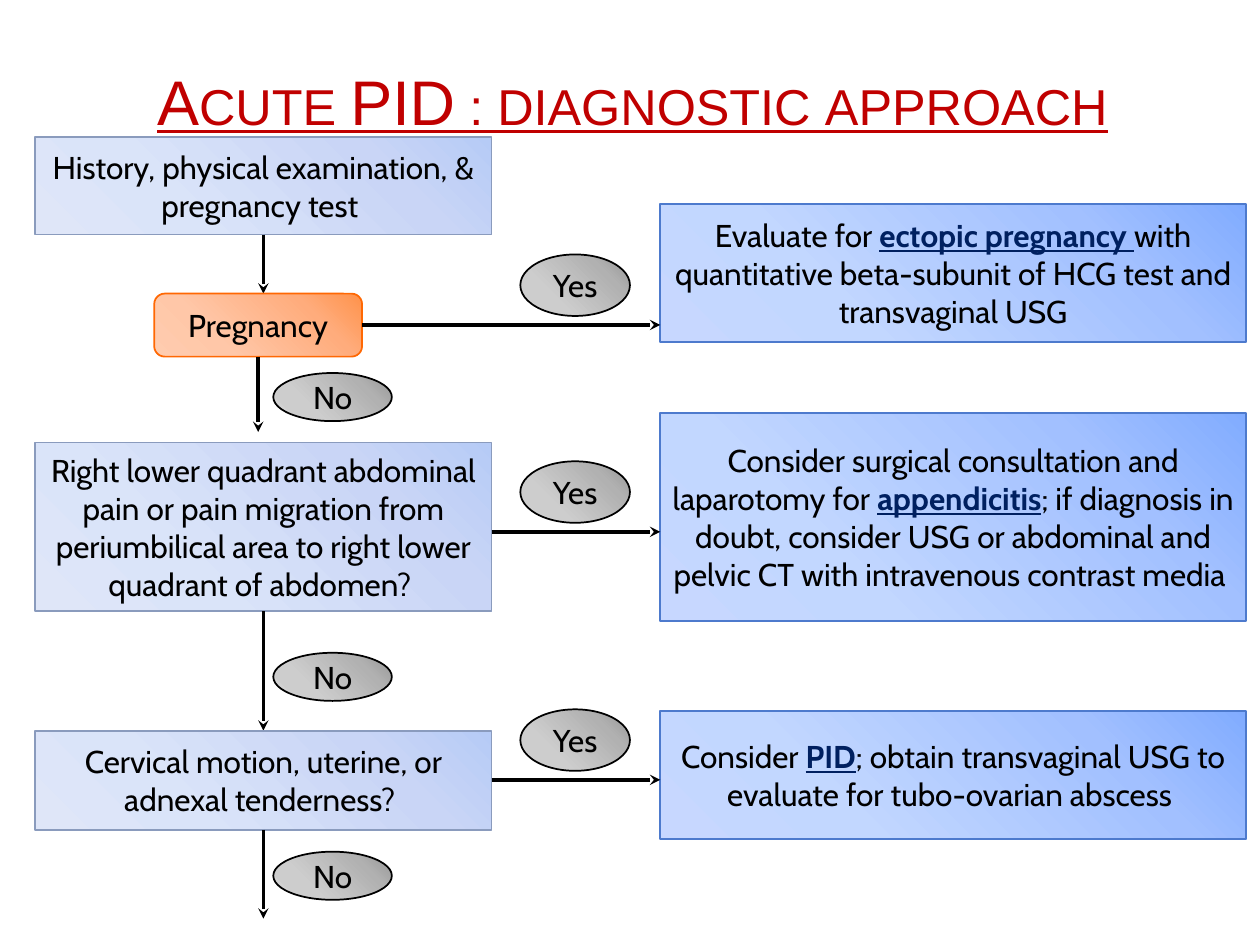
"""Build the diagnostic flowchart slide for acute PID."""
import lxml.etree
import pptx
import pptx.dml.color
import pptx.enum.shapes
import pptx.enum.text
import pptx.oxml
import pptx.oxml.ns
import pptx.util

Cm = pptx.util.Cm
SHAPES = pptx.enum.shapes.MSO_SHAPE
COLOURS = {"title": "C00000", "text": "000000", "key": "002060", "arrow": "000000"}
STYLES = {
    "step": {"stops": ["DFE6F8", "DAE4F9", "C9D5F6", "B6CBF6"], "line": "8A9BBD"},
    "outcome": {"stops": ["C7D7FF", "C2D7FF", "A2C0FF", "81ACFF"], "line": "4D7ACD"},
    "decision": {"stops": ["FFCCAF", "FFC7A8", "FFAC7C", "FF924A"], "line": "FF6803"},
    "answer": {"stops": ["D2D2D2", "CDCDCD", "B1B1B1", "949494"], "line": "000000"},
}
STOP_POSITIONS = [0, 30, 75, 100]
BODY_FONT = {"name": "Cabin", "size": pptx.util.Pt(18)}
KEY_FONT = {"bold": True, "underline": True}
TITLE_FONT = {"name": "Arial", "size": pptx.util.Pt(36), "underline": True}
STEP_LEFT, STEP_WIDTH = 0.71, 9.2
OUTCOME_LEFT, OUTCOME_WIDTH = 13.31, 11.81


def set_attributes(target, values):
    """Set every named value on the target."""
    for name, value in values.items():
        setattr(target, name, value)


def rgb(name):
    """Return the colour for a key of COLOURS or a hex string."""
    return pptx.dml.color.RGBColor.from_string(COLOURS.get(name, name))


def write_text(shape, parts, anchor=pptx.enum.text.MSO_ANCHOR.MIDDLE):
    """Write one centred paragraph from (text, colour, font values) parts."""
    frame = shape.text_frame
    set_attributes(frame, {"word_wrap": True, "vertical_anchor": anchor})
    paragraph = frame.paragraphs[0]
    paragraph.alignment = pptx.enum.text.PP_ALIGN.CENTER
    for text, colour, values in parts:
        run = paragraph.add_run()
        run.text = text
        set_attributes(run.font, values)
        run.font.color.rgb = rgb(colour)
    return paragraph


def fill_radial(shape, colours):
    """Fill the shape with a gradient spreading from its lower left corner."""
    stops = "".join(
        f'<a:gs pos="{position * 1000}"><a:srgbClr val="{colour}"/></a:gs>'
        for position, colour in zip(STOP_POSITIONS, colours))
    gradient = pptx.oxml.parse_xml(
        f'<a:gradFill {pptx.oxml.ns.nsdecls("a")} rotWithShape="1">'
        f'<a:gsLst>{stops}</a:gsLst><a:path path="circle">'
        '<a:fillToRect t="100000" r="100000"/></a:path></a:gradFill>')
    shape.fill.background()
    blank = shape.element.spPr.find(pptx.oxml.ns.qn("a:noFill"))
    shape.element.spPr.replace(blank, gradient)


def add_node(slide, box, parts, style, outline=SHAPES.RECTANGLE):
    """Add a gradient node with centred text."""
    node = slide.shapes.add_shape(outline, *map(Cm, box))
    node.shadow.inherit = False
    fill_radial(node, STYLES[style]["stops"])
    node.line.color.rgb = rgb(STYLES[style]["line"])
    node.line.width = pptx.util.Pt(1)
    write_text(node, [(text, colour, {**BODY_FONT, **values})
                      for text, colour, values in parts])


def add_arrow(slide, start, end):
    """Add a straight arrow between two points."""
    arrow = slide.shapes.add_connector(
        pptx.enum.shapes.MSO_CONNECTOR.STRAIGHT, *map(Cm, (*start, *end)))
    arrow.line.color.rgb = rgb("arrow")
    arrow.line.width = pptx.util.Pt(2)
    qn = pptx.oxml.ns.qn
    lxml.etree.SubElement(arrow.line._get_or_add_ln(), qn("a:tailEnd"), type="stealth")
    lxml.etree.SubElement(arrow.element.spPr, qn("a:effectLst"))


def add_title(slide, box):
    """Add the underlined small-caps title."""
    title = slide.shapes.add_textbox(*map(Cm, box))
    paragraph = write_text(
        title, [("Acute PID : diagnostic approach", "title", TITLE_FONT)],
        pptx.enum.text.MSO_ANCHOR.BOTTOM)
    paragraph.runs[0].font._element.set("cap", "small")


def add_question(slide, box, text, arrow_length, no_gap=None,
                 style="step", outline=SHAPES.RECTANGLE):
    """Add a question, the arrow below it and its optional No answer."""
    left, top, width, height = box
    middle, bottom = left + width / 2, top + height
    add_node(slide, box, [(text, "text", {})], style, outline)
    add_arrow(slide, (middle, bottom), (middle, bottom + arrow_length))
    if no_gap is not None:
        no_left = STEP_LEFT + STEP_WIDTH / 2 + 0.2
        add_node(slide, (no_left, bottom + no_gap, 2.39, 0.97),
                 [("No", "text", {})], "answer", SHAPES.OVAL)


def add_outcome(slide, box, before, key, after, arrow_left, arrow_drop):
    """Add an outcome with the Yes arrow that leads to it."""
    left, top = box[:2]
    arrow_top = top + arrow_drop
    parts = [(before, "text", {}), (key, "key", KEY_FONT), (after, "text", {})]
    add_node(slide, box, parts, "outcome")
    add_arrow(slide, (arrow_left, arrow_top), (left, arrow_top))
    add_node(slide, (left - 2.82, arrow_top - 1.42, 2.21, 1.24),
             [("Yes", "text", {})], "answer", SHAPES.OVAL)


def main():
    """Build and save the slide."""
    deck = pptx.Presentation()
    set_attributes(deck, {"slide_width": Cm(25.4), "slide_height": Cm(19.05)})
    slide = deck.slides.add_slide(deck.slide_layouts[6])
    add_title(slide, (1.5, -0.28, 22.5, 3.18))

    questions = [
        (2.77, 1.96, "History, physical examination, & pregnancy test ", 1.19, None),
        (8.92, 3.4, "Right lower quadrant abdominal pain or pain migration from "
         "periumbilical area to right lower quadrant of abdomen? ", 2.41, 0.84),
        (14.73, 2, "Cervical motion, uterine, or adnexal tenderness? ", 1.79, 0.44),
    ]
    for top, height, text, arrow_length, no_gap in questions:
        add_question(slide, (STEP_LEFT, top, STEP_WIDTH, height), text,
                     arrow_length, no_gap)
    add_question(slide, (3.11, 5.92, 4.19, 1.27), "Pregnancy", 1.52, 0.33,
                 "decision", SHAPES.ROUNDED_RECTANGLE)

    step_right = STEP_LEFT + STEP_WIDTH
    outcomes = [
        (4.11, 2.79, "Evaluate for ", "ectopic pregnancy ",
         "with quantitative beta-subunit of HCG test and transvaginal USG", 7.3, 2.44),
        (8.33, 4.19, "Consider surgical consultation and laparotomy for ",
         "appendicitis", "; if diagnosis in doubt, consider USG or abdominal and "
         "pelvic CT with intravenous contrast media ", step_right, 2.39),
        (14.33, 2.59, "Consider ", "PID", "; obtain transvaginal USG to evaluate "
         "for tubo-ovarian abscess ", step_right, 1.39),
    ]
    for top, height, *content in outcomes:
        add_outcome(slide, (OUTCOME_LEFT, top, OUTCOME_WIDTH, height), *content)
    deck.save("out.pptx")


if __name__ == "__main__":
    main()
